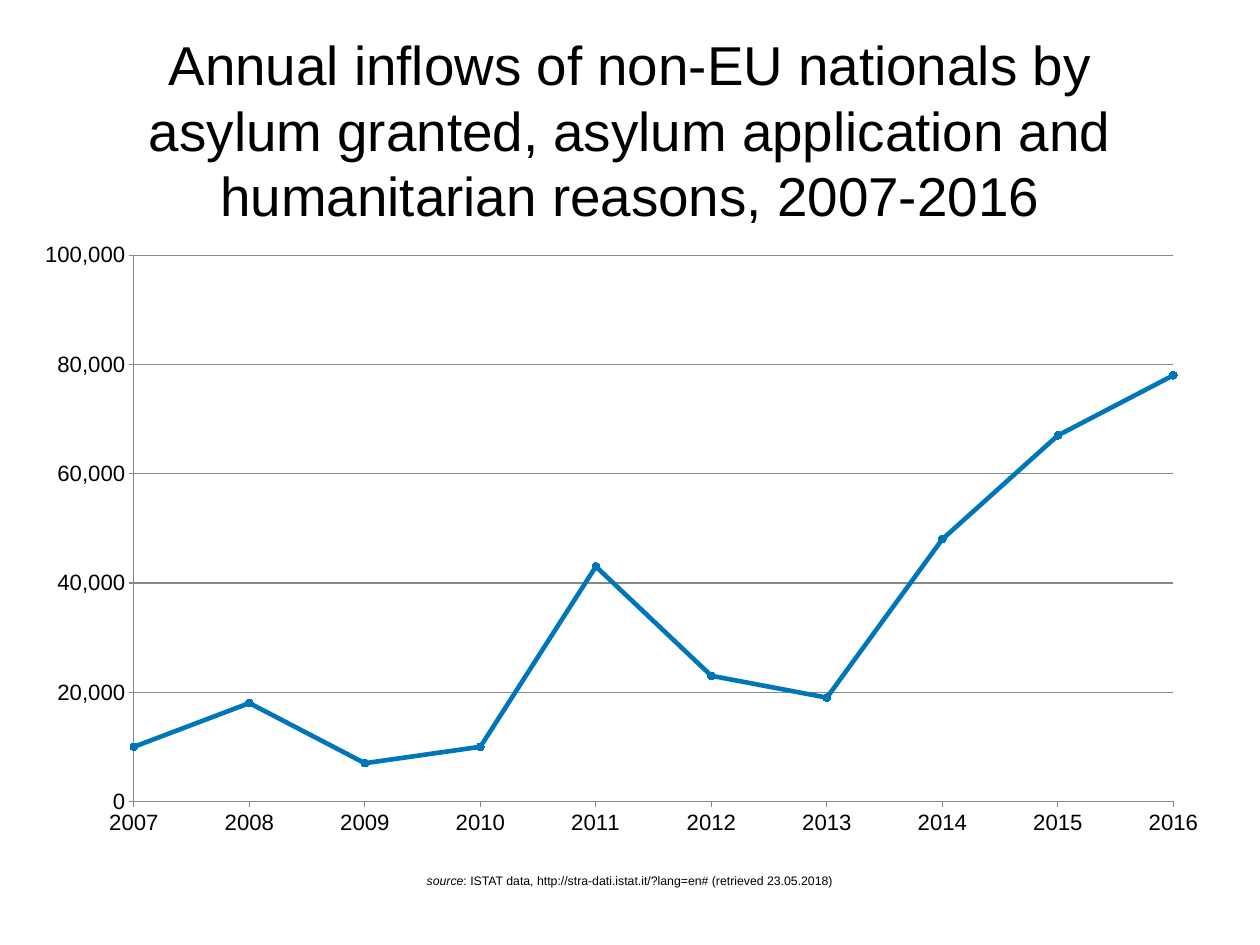
from lxml import etree
from pptx import Presentation
from pptx.chart.data import CategoryChartData
from pptx.dml.color import RGBColor
from pptx.enum.chart import XL_CHART_TYPE, XL_MARKER_STYLE, XL_TICK_LABEL_POSITION, XL_TICK_MARK
from pptx.enum.text import MSO_ANCHOR, MSO_AUTO_SIZE, PP_ALIGN
from pptx.oxml.ns import qn
from pptx.util import Inches, Pt

LINE_MARKERS = XL_CHART_TYPE.LINE_MARKERS
CIRCLE = XL_MARKER_STYLE.CIRCLE
LABELS_LOW = XL_TICK_LABEL_POSITION.LOW
TICK_OUT, TICK_NONE = XL_TICK_MARK.OUTSIDE, XL_TICK_MARK.NONE
MIDDLE = MSO_ANCHOR.MIDDLE
CENTER = PP_ALIGN.CENTER
NO_FIT = MSO_AUTO_SIZE.NONE
GROW = MSO_AUTO_SIZE.SHAPE_TO_FIT_TEXT

BLACK = RGBColor(0x00, 0x00, 0x00)
GRAY = RGBColor(0x88, 0x88, 0x88)
BLUE = RGBColor(0x00, 0x76, 0xBA)

TITLE = ("Annual inflows of non-EU nationals by asylum granted, "
         "asylum application and humanitarian reasons, 2007-2016")
YEARS = [str(year) for year in range(2007, 2017)]
INFLOWS = [10000, 18000, 7000, 10000, 43000, 23000, 19000, 48000, 67000, 78000]


def format_font(font, size, color=BLACK, name="Arial", italic=None):
    font.size = Pt(size)
    font.name = name
    font.color.rgb = color
    font.italic = italic


def add_run(p, text, **style):
    r = p.add_run()
    r.text = text
    format_font(r.font, **style)


def format_line(line, color, width):
    line.color.rgb = color
    line.width = Pt(width)


class SlideBuilder:
    def __init__(self, prs):
        self.s = prs.slides.add_slide(prs.slide_layouts[5])
        self.margin = Inches(0.06)

    def fill_text(self, sp, runs, size, wrap, fit):
        tf = sp.text_frame
        tf.word_wrap = wrap
        tf.auto_size = fit
        tf.vertical_anchor = MIDDLE
        tf.margin_left = tf.margin_right = self.margin
        tf.margin_top = tf.margin_bottom = self.margin
        p = tf.paragraphs[0]
        p.alignment = CENTER
        for text, italic in runs:
            add_run(p, text, size=size, italic=italic)

    def title(self, text, x, y, w, h, size):
        sp = self.s.shapes.title
        sp.left, sp.top, sp.width, sp.height = map(Inches, (x, y, w, h))
        self.fill_text(sp, [(text, False)], size, True, NO_FIT)

    def text(self, runs, x, y, w, h, size):
        sp = self.s.shapes.add_textbox(*map(Inches, (x, y, w, h)))
        self.fill_text(sp, runs, size, False, GROW)

    def axis(self, axis, number_format):
        axis.major_tick_mark = TICK_OUT
        axis.minor_tick_mark = TICK_NONE
        axis.tick_labels.number_format = number_format
        axis.tick_labels.number_format_is_linked = False
        format_font(axis.tick_labels.font, 18)
        format_line(axis.format.line, GRAY, 1)

    def start_on_axis(self, value_axis):
        cross = etree.Element(qn("c:crossBetween"))
        cross.set("val", "midCat")
        value_axis._element.find(qn("c:crosses")).addnext(cross)

    def plot_area(self, chart, **box):
        area = chart._chartSpace.chart.plotArea
        for old in area.findall(qn("c:layout")):
            area.remove(old)
        layout = etree.Element(qn("c:layout"))
        manual = etree.SubElement(layout, qn("c:manualLayout"))
        settings = {"layoutTarget": "inner", "xMode": "edge", "yMode": "edge", **box}
        for tag, val in settings.items():
            etree.SubElement(manual, qn(f"c:{tag}")).set("val", str(val))
        area.insert(0, layout)

    def line_chart(self, cats, vals, x, y, w, h):
        data = CategoryChartData(number_format="#,##0")
        data.categories = cats
        data.add_series("Series 1", vals)
        frame = self.s.shapes.add_chart(LINE_MARKERS, *map(Inches, (x, y, w, h)), data)
        chart = frame.chart
        chart.has_legend = False
        chart.has_title = False
        format_font(chart.font, 10)
        chart.plots[0].vary_by_categories = False
        self.plot_area(chart, x=0.079, y=0.043, w=0.899, h=0.88)

        self.axis(chart.category_axis, "General")
        chart.category_axis.tick_label_position = LABELS_LOW
        value_axis = chart.value_axis
        self.axis(value_axis, "#,##0")
        value_axis.minimum_scale = 0
        value_axis.maximum_scale = 100000
        value_axis.major_unit = 20000
        format_line(value_axis.major_gridlines.format.line, GRAY, 1)
        self.start_on_axis(value_axis)

        series = chart.plots[0].series[0]
        series.smooth = False
        format_line(series.format.line, BLUE, 3.75)
        marker = series.marker
        marker.style = CIRCLE
        marker.size = 6
        marker.format.fill.solid()
        marker.format.fill.fore_color.rgb = BLUE
        format_line(marker.format.line, BLUE, 1)


def main():
    prs = Presentation()
    prs.slide_width, prs.slide_height = Inches(14.22), Inches(10.67)
    slide = SlideBuilder(prs)
    slide.title(TITLE, 1.04, 0.28, 12.14, 2.36, size=44.5)
    slide.line_chart(YEARS, INFLOWS, 0.48, 2.58, 13.05, 7.01)
    source = [("source", True),
              (": ISTAT data, http://stra-dati.istat.it/?lang=en# (retrieved 23.05.2018)", False)]
    slide.text(source, 4.73, 9.81, 4.75, 0.27, size=10)
    prs.save("out.pptx")


if __name__ == "__main__":
    main()
